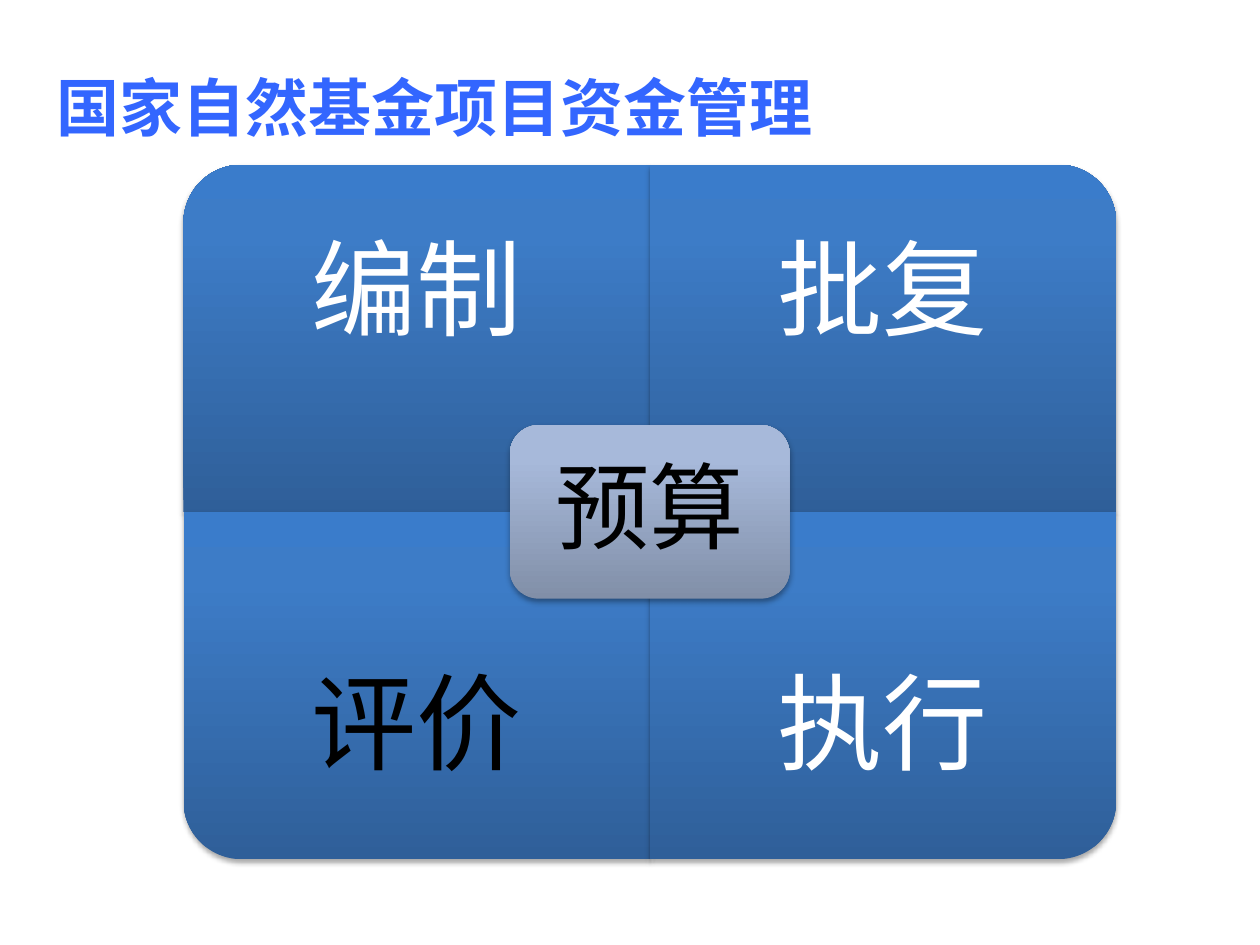
from dataclasses import dataclass

from lxml.etree import SubElement
from pptx import Presentation
from pptx.dml.color import RGBColor
from pptx.enum.shapes import MSO_SHAPE as Shape
from pptx.enum.text import MSO_ANCHOR as Anchor, MSO_AUTO_SIZE as AutoSize, PP_ALIGN as Align
from pptx.oxml import parse_xml
from pptx.oxml.ns import nsdecls, qn
from pptx.util import Cm, Pt

FONT = "Noto Sans CJK SC"
COLORS = {
    "title": "3366FF", "light": "FFFFFF", "dark": "000000", "shadow": "000000",
    "blue_bottom": "2F5F99", "blue_middle": "3D7CC7", "blue_top": "3A7CCB",
    "grey_bottom": "818FA8", "grey_middle": "A7B9DA", "grey_top": "A7BADC",
}

# Matrix geometry in centimetres
CENTRE_X, CENTRE_Y = 13.1, 10.32
CELL_W, CELL_H = 9.4, 7.0
CORE_W, CORE_H = 5.64, 3.5
CORE_PAD = 0.16


@dataclass
class Quadrant:
    label: str
    column: int
    row: int
    rotation: int
    color: str = "light"


QUADRANTS = [
    Quadrant("编制", 0, 0, 270),
    Quadrant("批复", 1, 0, 0),
    Quadrant("评价", 0, 1, 180, "dark"),
    Quadrant("执行", 1, 1, 90),
]


def add_span(para, text: str, size: int, color: str, bold: bool = False) -> None:
    span = para.add_run()
    span.text = text
    font = span.font
    font.size, font.name, font.bold = Pt(size), FONT, bold
    font.color.rgb = RGBColor.from_string(COLORS[color])
    SubElement(font._element, qn("a:ea")).set("typeface", FONT)


def add_panel(page, kind, x: float, y: float, width: float, height: float,
              tone: str, rotation: int = 0) -> None:
    """Draw a shaded panel centred on x, y; width and height are as seen."""
    if rotation % 180:
        width, height = height, width
    panel = page.shapes.add_shape(
        kind, Cm(x - width / 2), Cm(y - height / 2), Cm(width), Cm(height))
    panel.rotation = rotation
    panel.line.fill.background()

    # Upright gradient and soft shadow, independent of the rotation
    stops = "".join(
        f'<a:gs pos="{pos}"><a:srgbClr val="{COLORS[f"{tone}_{part}"]}"/></a:gs>'
        for pos, part in ((0, "bottom"), (80000, "middle"), (100000, "top")))
    panel._element.spPr.find(qn("a:ln")).addprevious(parse_xml(
        f'<a:gradFill {nsdecls("a")} rotWithShape="0"><a:gsLst>{stops}</a:gsLst>'
        '<a:lin ang="16200000" scaled="0"/></a:gradFill>'))
    panel._element.spPr.append(parse_xml(
        f'<a:effectLst {nsdecls("a")}><a:outerShdw blurRad="40000" dist="23000" '
        f'dir="5400000" rotWithShape="0"><a:srgbClr val="{COLORS["shadow"]}">'
        '<a:alpha val="35000"/></a:srgbClr></a:outerShdw></a:effectLst>'))


def add_label(page, text: str, left: float, top: float, width: float, height: float,
              inset: float, size: int, color: str) -> None:
    box = page.shapes.add_textbox(Cm(left), Cm(top), Cm(width), Cm(height))
    frame = box.text_frame
    frame.word_wrap = True
    frame.vertical_anchor = Anchor.MIDDLE
    frame.margin_left = frame.margin_right = Cm(inset)
    frame.margin_top = frame.margin_bottom = Cm(inset)
    para = frame.paragraphs[0]
    para.alignment = Align.CENTER
    para.line_spacing = 0.9
    add_span(para, text, size, color)


def add_title(page, text: str) -> None:
    title = page.shapes.title
    title.left, title.top, title.width, title.height = Cm(0.89), Cm(0.71), Cm(17.4), Cm(2.18)
    frame = title.text_frame
    frame.auto_size = AutoSize.NONE
    frame.word_wrap = True
    frame.vertical_anchor = Anchor.TOP
    frame.margin_top = Cm(0.28)
    para = frame.paragraphs[0]
    para.alignment = Align.LEFT
    para.line_spacing = 1.25
    add_span(para, text, 36, "title", bold=True)


def add_quadrant(page, item: Quadrant) -> None:
    left = CENTRE_X + (item.column - 1) * CELL_W
    top = CENTRE_Y + (item.row - 1) * CELL_H
    add_panel(page, Shape.ROUND_1_RECTANGLE, left + CELL_W / 2, top + CELL_H / 2,
              CELL_W, CELL_H, "blue", item.rotation)
    # Labels fill the outer three quarters of each cell
    add_label(page, item.label, left, top + item.row * CELL_H / 4,
              CELL_W, CELL_H * 0.75, 1.19, 60, item.color)


def main() -> None:
    deck = Presentation()
    deck.slide_width, deck.slide_height = Cm(25.4), Cm(19.05)
    page = deck.slides.add_slide(deck.slide_layouts[5])

    # Four quadrants
    for item in QUADRANTS:
        add_quadrant(page, item)

    # Central topic
    add_panel(page, Shape.ROUNDED_RECTANGLE, CENTRE_X, CENTRE_Y, CORE_W, CORE_H, "grey")
    add_label(page, "预算", CENTRE_X - CORE_W / 2 + CORE_PAD, CENTRE_Y - CORE_H / 2 + CORE_PAD,
              CORE_W - 2 * CORE_PAD, CORE_H - 2 * CORE_PAD, 0.58, 54, "dark")

    add_title(page, "国家自然基金项目资金管理")
    deck.save("out.pptx")


if __name__ == "__main__":
    main()
